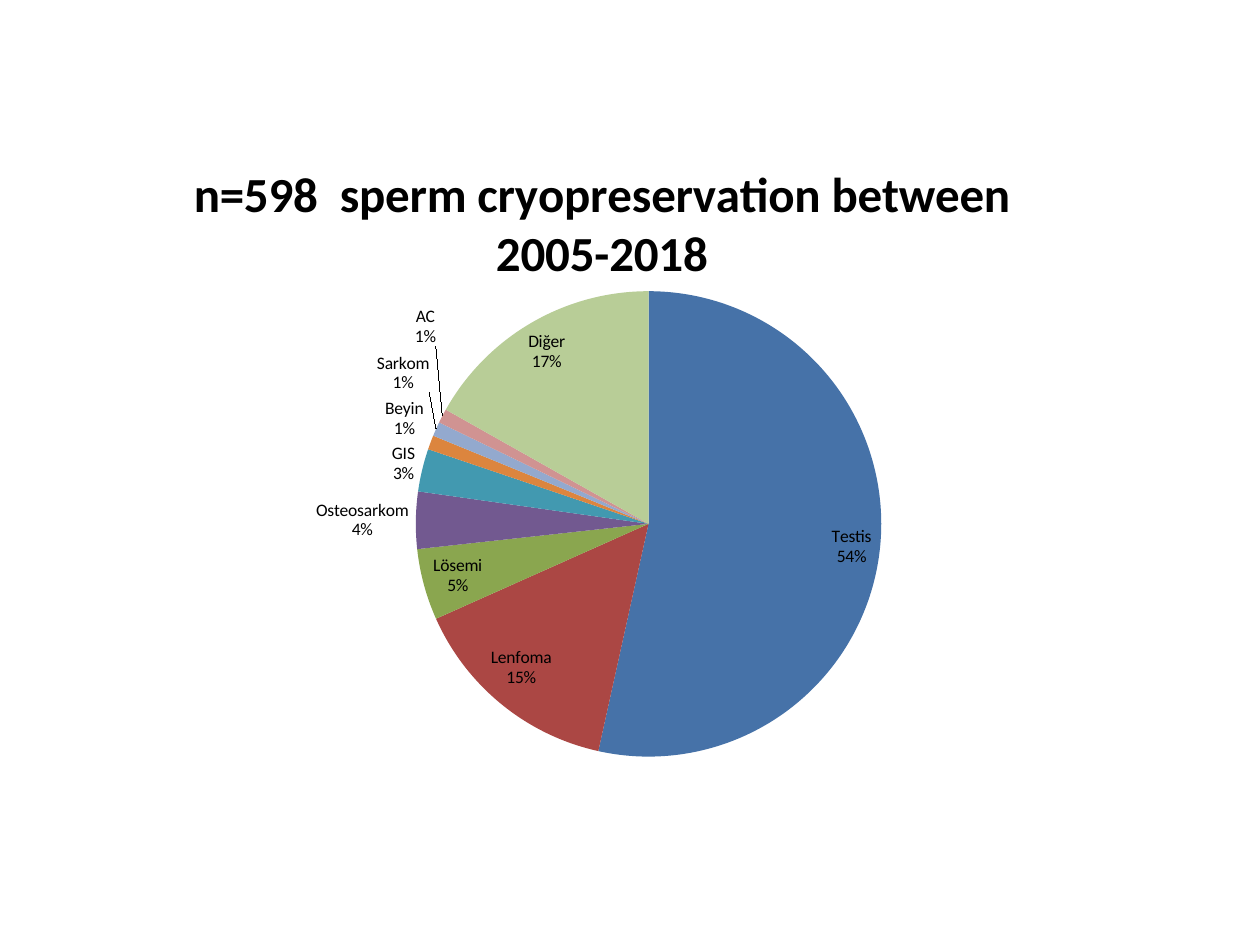
from pptx import Presentation
from pptx.chart.data import CategoryChartData
from pptx.dml.color import RGBColor
from pptx.enum.chart import XL_CHART_TYPE, XL_LABEL_POSITION
from pptx.oxml import parse_xml
from pptx.oxml.ns import nsdecls, qn
from pptx.util import Emu, Pt

PX = 914400 // 126
FONT = "Calibri"
PERCENT = '0"%"'
TITLE = "n=598  sperm cryopreservation between 2005-2018"
COLOURS = {"text": "000000"}

# Diagnosis: share in percent, slice colour
SLICES = {
    "Testis": (54, "4672A8"),
    "Lenfoma": (15, "AB4744"),
    "Lösemi": (5, "8AA64F"),
    "Osteosarkom": (4, "725990"),
    "GIS": (3, "4299B0"),
    "Beyin": (1, "DC853E"),
    "Sarkom": (1, "93A9CE"),
    "AC": (1, "D09392"),
    "Diğer": (17, "B8CD97"),
}
# Labels lifted off their slices, as shares of the chart's size
LABEL_SHIFTS = {"Sarkom": (0, -0.05), "AC": (0, -0.1)}


def set_font(font, **values):
    for name, value in {"name": FONT, **values}.items():
        setattr(font, name, value)
    font.color.rgb = RGBColor.from_string(COLOURS["text"])


def manual_layout(**values):
    items = "".join(f'<c:{name} val="{value}"/>' for name, value in values.items())
    return parse_xml(f'<c:layout {nsdecls("c")}><c:manualLayout>{items}'
                     "</c:manualLayout></c:layout>")


def replace_layout(parent, layout, position):
    for old in parent.findall(qn("c:layout")):
        parent.remove(old)
    parent.insert(position, layout)


def add_pie(page, left, top, width, height):
    data = CategoryChartData()
    data.categories = list(SLICES)
    data.add_series("Series 1", [share for share, _ in SLICES.values()])
    box = [Emu(length * PX) for length in (left, top, width, height)]
    chart = page.shapes.add_chart(XL_CHART_TYPE.PIE, *box, data).chart
    chart.has_legend = False
    set_font(chart.font, size=Pt(10))
    plot = chart.plots[0]
    plot.vary_by_categories = True
    for index, (_, colour) in enumerate(SLICES.values()):
        fill = plot.series[0].points[index].format.fill
        fill.solid()
        fill.fore_color.rgb = RGBColor.from_string(colour)
    return chart


def add_title(chart):
    chart.has_title = True
    title = chart.chart_title
    para = title.text_frame.paragraphs[0]
    span = para.add_run()
    span.text = TITLE
    set_font(span.font, size=Pt(28), bold=True)
    title.include_in_layout = False
    replace_layout(title._element, manual_layout(
        xMode="edge", yMode="edge", x=0.12, y=0.04), 1)


def place_pie(chart):
    area = chart._chartSpace.chart.plotArea
    replace_layout(area, manual_layout(
        layoutTarget="inner", xMode="edge", yMode="edge",
        x=0.33, y=0.25, w=0.43, h=0.7), 0)


def shifted_label(index, x, y):
    label = parse_xml(
        f'<c:dLbl {nsdecls("c")}><c:idx val="{index}"/>'
        f"<c:numFmt formatCode='{PERCENT}' sourceLinked='0'/>"
        '<c:dLblPos val="bestFit"/><c:showLegendKey val="0"/><c:showVal val="1"/>'
        '<c:showCatName val="1"/><c:showSerName val="0"/><c:showPercent val="0"/>'
        '<c:showBubbleSize val="0"/><c:separator>\n</c:separator></c:dLbl>')
    label.insert(1, manual_layout(x=x, y=y))
    return label


def add_labels(chart):
    labels = chart.plots[0].series[0].data_labels
    settings = {
        "number_format": PERCENT, "number_format_is_linked": False,
        "position": XL_LABEL_POSITION.BEST_FIT, "show_value": True,
        "show_category_name": True, "show_percentage": False,
    }
    for name, value in settings.items():
        setattr(labels, name, value)
    set_font(labels.font, size=Pt(10))
    # Category and share stand on separate lines
    element = labels._element
    element.find(qn("c:showBubbleSize")).addnext(
        parse_xml(f'<c:separator {nsdecls("c")}>\n</c:separator>'))
    names = list(SLICES)
    for position, (name, shift) in enumerate(LABEL_SHIFTS.items()):
        element.insert(position, shifted_label(names.index(name), *shift))


def main():
    deck = Presentation()
    deck.slide_width, deck.slide_height = Emu(1260 * PX), Emu(945 * PX)
    page = deck.slides.add_slide(deck.slide_layouts[6])
    chart = add_pie(page, 54, 125, 1091, 665)
    add_title(chart)
    place_pie(chart)
    add_labels(chart)
    deck.save("out.pptx")


if __name__ == "__main__":
    main()
